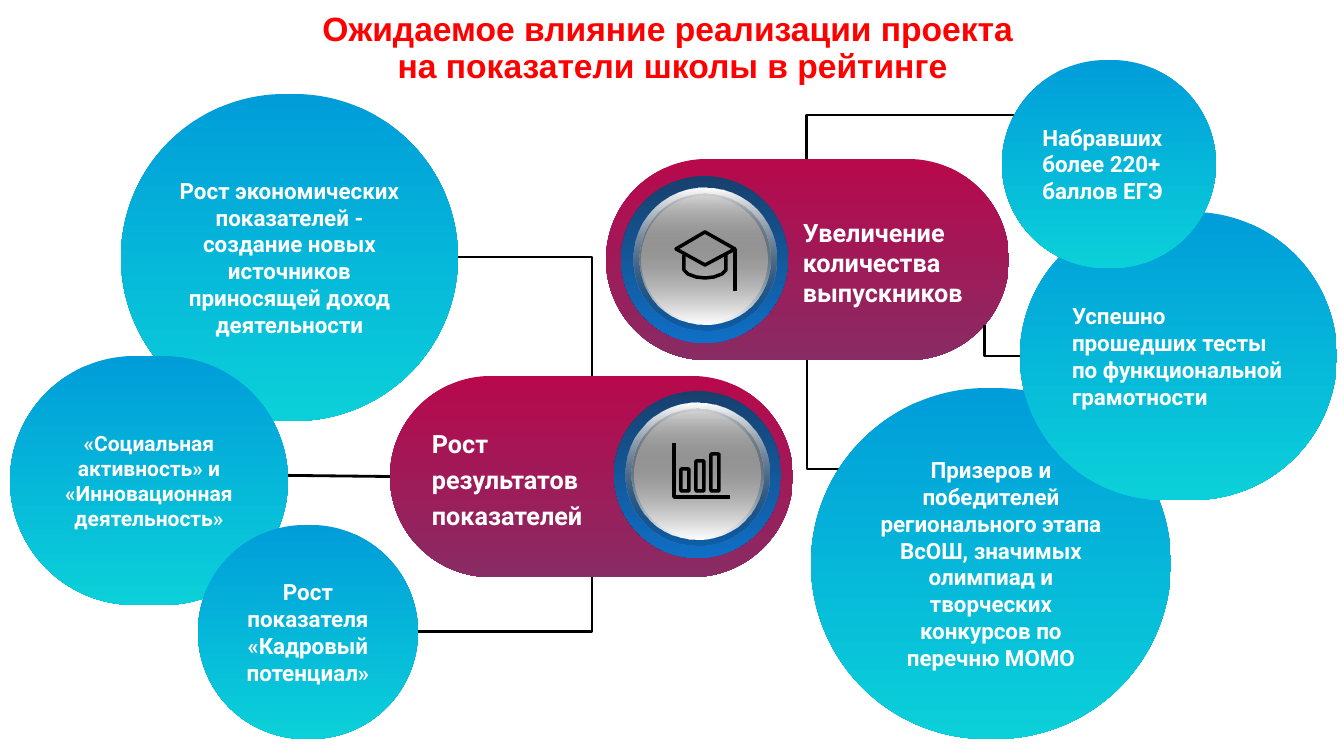
from pptx import Presentation
from pptx.dml.color import RGBColor
from pptx.enum.shapes import MSO_CONNECTOR as Link, MSO_SHAPE as Shape
from pptx.enum.text import MSO_ANCHOR as Anchor, PP_ALIGN as Align
from pptx.oxml.ns import qn
from pptx.util import Pt
from lxml import etree

EMU_PER_PX = 914400 / 100.8
COLORS = {
    "title": "FF0000", "white": "FFFFFF", "black": "000000",
    "pill_top": "B7094C", "pill_bottom": "892B64",
    "bubble_top": "009DD9", "bubble_bottom": "0BD0D9",
    "ring_top": "17406D", "ring_bottom": "0F6FC6",
}
DOWN, UP = 270, 90
BUTTON_SIZE = 167


def px(*lengths):
    return [round(length * EMU_PER_PX) for length in lengths]


def color(name):
    return RGBColor.from_string(COLORS[name])


def paint_gradient(shape, first, last, angle=DOWN, first_opacity=100):
    shape.fill.gradient()
    shape.fill.gradient_angle = angle
    for stop, name, position in zip(shape.fill.gradient_stops, (first, last), (0, 1)):
        stop.color.rgb = color(name)
        stop.position = position
    if first_opacity < 100:
        tone = next(shape.element.iter(qn("a:srgbClr")))
        etree.SubElement(tone, qn("a:alpha")).set("val", str(first_opacity * 1000))


def add_plain_shape(page, kind, box):
    shape = page.shapes.add_shape(kind, *px(*box))
    shape.shadow.inherit = False
    shape.line.fill.background()
    if kind == Shape.ROUNDED_RECTANGLE:
        shape.adjustments[0] = 0.5
    return shape


def write_text(frame, text, size, font="Roboto", tone="white", align=Align.LEFT,
               anchor=Anchor.MIDDLE, spacing=1.0):
    frame.word_wrap = True
    frame.vertical_anchor = anchor
    para = frame.paragraphs[0]
    para.text = text
    para.alignment = align
    para.line_spacing = spacing
    for span in para.runs:
        span.font.name = font
        span.font.size = Pt(size)
        span.font.bold = True
        span.font.color.rgb = color(tone)


def style_line(shape, width):
    shape.line.color.rgb = color("black")
    shape.line.width = Pt(width)


def add_stroke(page, origin, points, closed=False):
    builder = page.shapes.build_freeform(*points[0], scale=EMU_PER_PX)
    builder.add_line_segments(points[1:], close=closed)
    stroke = builder.convert_to_shape(*px(*origin))
    stroke.shadow.inherit = False
    stroke.fill.background()
    style_line(stroke, 2.5)


def add_title(page, box):
    title = page.shapes.add_textbox(*px(*box))
    write_text(title.text_frame,
               "Ожидаемое влияние реализации проекта \vна показатели школы в рейтинге",
               24, "Arial", "title", Align.CENTER, spacing=0.9)


def add_button(page, left, top):
    def add_disc(size):
        inset = (BUTTON_SIZE - size) / 2
        return add_plain_shape(page, Shape.OVAL, (left + inset, top + inset, size, size))

    paint_gradient(add_disc(BUTTON_SIZE), "ring_top", "ring_bottom")
    core = add_disc(127)
    core.fill.solid()
    core.fill.fore_color.rgb = color("white")
    paint_gradient(add_disc(143), "black", "white", UP, 11)
    paint_gradient(add_disc(131), "black", "white", DOWN, 11)


def add_cap_icon(page, left, top):
    board = [(84, 56), (114, 73), (84, 89), (55, 73)]
    bowl = [(63, 79), (63, 94), (67, 98), (75, 101), (84, 102),
            (93, 101), (101, 98), (105, 94), (105, 79)]
    tassel = [(114, 73), (114, 115)]
    add_stroke(page, (left, top), board, closed=True)
    for points in (bowl, tassel):
        add_stroke(page, (left, top), points)


def add_bars_icon(page, left, top):
    for index, bar_top in enumerate((78, 70, 63)):
        box = (left + 67 + 15 * index, top + bar_top, 8, 100 - bar_top)
        bar = add_plain_shape(page, Shape.ROUNDED_RECTANGLE, box)
        bar.adjustments[0] = 0.1
        bar.fill.background()
        style_line(bar, 2.5)
    add_stroke(page, (left, top), [(60, 52), (60, 106), (116, 106)])


def add_pill(page, box, button_offset, add_icon, label_box, label, spacing):
    left, top = box[:2]
    pill = add_plain_shape(page, Shape.ROUNDED_RECTANGLE, box)
    paint_gradient(pill, "pill_top", "pill_bottom")
    corner = left + button_offset[0], top + button_offset[1]
    add_button(page, *corner)
    add_icon(page, *corner)
    x, y, width, height = label_box
    caption = page.shapes.add_textbox(*px(left + x, top + y, width, height))
    write_text(caption.text_frame, label, 18, anchor=Anchor.TOP, spacing=spacing)
    return pill


def add_link(page, kind, start, end):
    link = page.shapes.add_connector(kind, *px(*start, *end))
    style_line(link, 2)
    properties = link.element.spPr
    etree.SubElement(properties, qn("a:effectLst"))
    if kind == Link.ELBOW:
        properties.find(qn("a:prstGeom")).set("prst", "bentConnector2")
    return link


def add_bubble(page, box, text, size=16, align=Align.CENTER):
    bubble = add_plain_shape(page, Shape.ROUNDED_RECTANGLE, box)
    paint_gradient(bubble, "bubble_top", "bubble_bottom")
    write_text(bubble.text_frame, text, size, align=align)


def add_impact_map(page):
    growth = add_pill(page, (390, 376, 403, 201), (224, 15), add_bars_icon,
                      (32, 41, 180, 150), "Рост результатов показателей", 1.2)
    add_pill(page, (606, 159, 403, 201), (15, 17), add_cap_icon,
             (187, 53, 250, 132), "Увеличение количества выпускников", 1.0)

    for start, end in (
        ((390, 632), (592, 577)), ((457, 257), (592, 376)),
        ((1054, 115), (807, 159)), ((848, 469), (807, 360)),
        ((1020, 356), (985, 325)),
    ):
        add_link(page, Link.ELBOW, start, end)
    social_link = add_link(page, Link.STRAIGHT, (390, 476), (251, 475))
    social_link.begin_connect(growth, 1)

    add_bubble(page, (811, 388, 360, 351),
               "Призеров и победителей регионального этапа ВсОШ, значимых "
               "олимпиад и творческих конкурсов по перечню МОМО")
    add_bubble(page, (1020, 212, 317, 288),
               "Успешно прошедших тесты по функциональной грамотности", align=Align.LEFT)
    add_bubble(page, (1002, 60, 214, 208),
               "Набравших более 220+ баллов ЕГЭ", align=Align.LEFT)
    add_bubble(page, (121, 94, 337, 327),
               "Рост экономических показателей - создание новых источников "
               "приносящей доход деятельности")
    add_bubble(page, (10, 356, 278, 249),
               "«Социальная активность» и «Инновационная деятельность»", 15)
    add_bubble(page, (198, 525, 220, 214), "Рост показателя «Кадровый потенциал»")


def main():
    deck = Presentation()
    deck.slide_width, deck.slide_height = px(1344, 756)
    page = deck.slides.add_slide(deck.slide_layouts[6])
    add_title(page, (194, 11, 957, 76))
    add_impact_map(page)
    deck.save("out.pptx")


if __name__ == "__main__":
    main()
